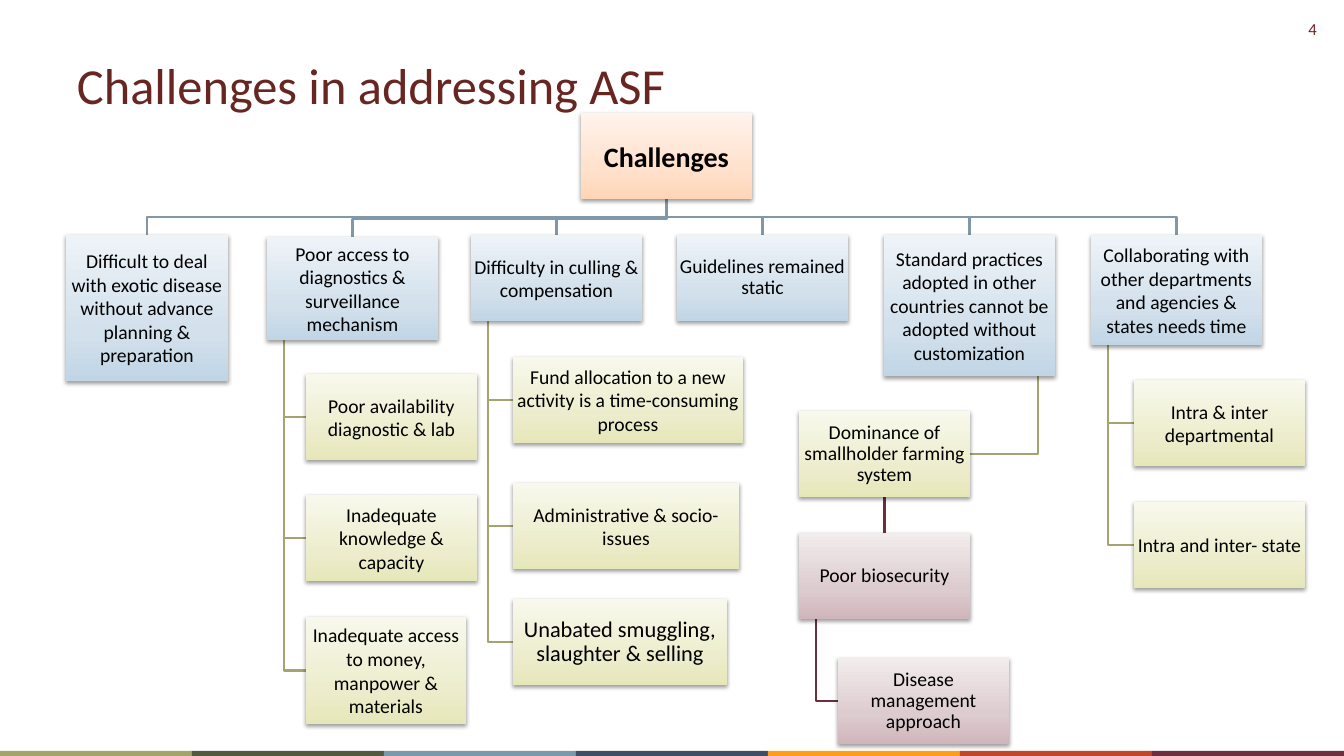
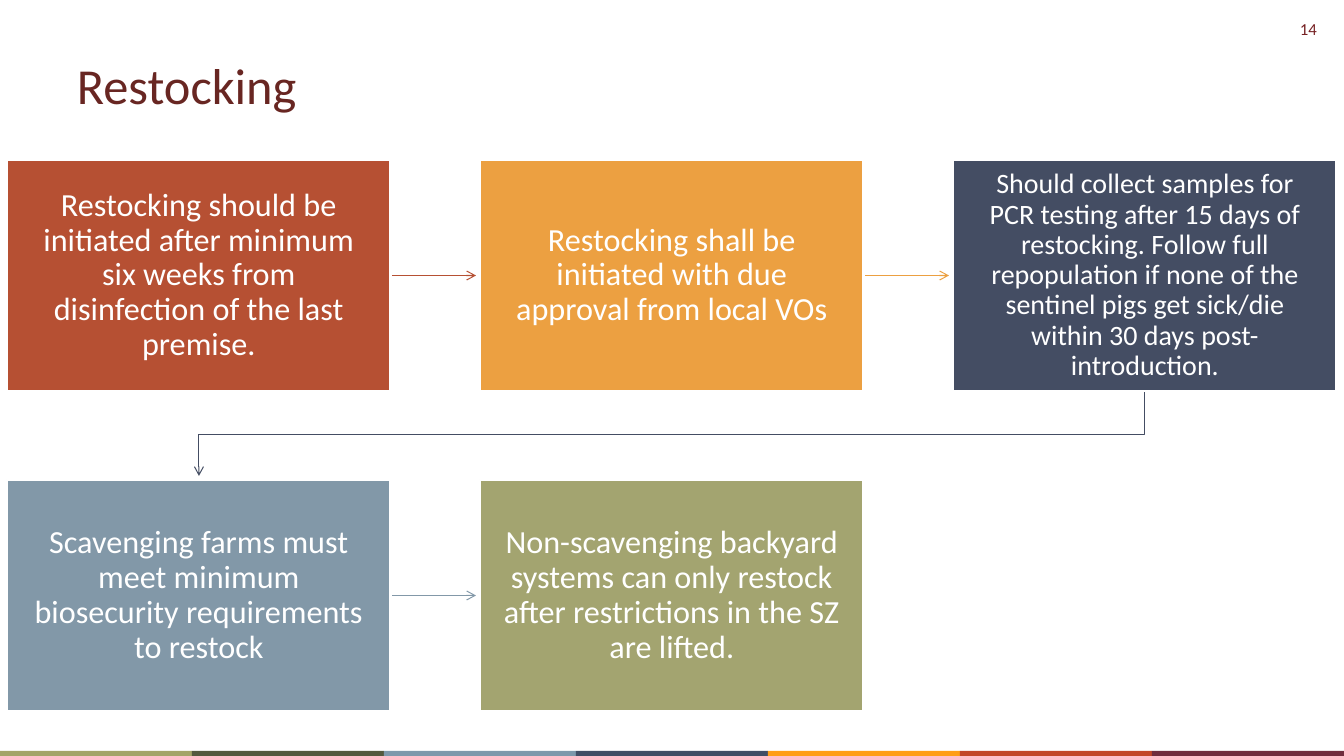
from itertools import pairwise
from lxml.etree import SubElement
from pptx import Presentation
from pptx.dml.color import RGBColor
from pptx.enum.shapes import MSO_CONNECTOR, MSO_SHAPE
from pptx.enum.text import MSO_ANCHOR, PP_ALIGN
from pptx.oxml import parse_xml
from pptx.oxml.ns import nsdecls, qn
from pptx.util import Pt

WIDE, HIGH = 1344, 756
SCALE = 12192000 / WIDE
FONT = "Calibri"
COLORS = {
    "title": "682622", "number": "762123", "black": "000000", "white": "FFFFFF",
    "rust": "B65033", "amber": "ECA041", "navy": "444D63",
    "steel": "8298A8", "olive": "A3A470", "wine": "69303D",
}
BANDS = ["A3A467", "53593E", "7C98AB", "404E65", "FF9E16", "C34628", "712C3D"]
FADES = {
    "peach": ["FFD5B7", "FFE1CC", "FFF3EC"],
    "steel": ["C1D5E5", "D3E1EC", "EEF3F8"],
    "olive": ["E6E7B9", "EDEDCE", "F8F9EC"],
    "wine": ["CFB6BA", "DDCCCF", "F2ECED"],
}
NODE_W, NODE_H = 171, 86
STEM = 17
STEP_W, STEP_H = 384, 231
STEP_X, STEP_Y = 473, 320
REACH = 85


def px(value):
    return round(value * SCALE)


def paint(color):
    return RGBColor.from_string(COLORS.get(color, color))


def write(shape, text, size, color, align=PP_ALIGN.CENTER, bold=False,
          tight=False, inset=(1, 1), anchor=MSO_ANCHOR.MIDDLE):
    frame = shape.text_frame
    frame.text = text
    frame.word_wrap = True
    frame.vertical_anchor = anchor
    frame.margin_left = frame.margin_right = px(inset[0])
    frame.margin_top = frame.margin_bottom = px(inset[1])
    line = frame.paragraphs[0]
    line.alignment = align
    if tight:
        line.line_spacing = 0.9
    font = line.runs[0].font
    font.name, font.size, font.bold = FONT, Pt(size), bold
    font.color.rgb = paint(color)


def add_label(slide, box, text, size, color, align, anchor):
    label = slide.shapes.add_textbox(*map(px, box))
    write(label, text, size, color, align, inset=(10, 5), anchor=anchor)


def add_rect(slide, box, color=None):
    rect = slide.shapes.add_shape(MSO_SHAPE.RECTANGLE, *map(px, box))
    rect.shadow.inherit = False
    rect.line.fill.background()
    if color:
        rect.fill.solid()
        rect.fill.fore_color.rgb = paint(color)
    return rect


def add_route(slide, points, color, width, arrow=False):
    spots = [(px(x), px(y)) for x, y in points]
    if len(spots) == 2:
        route = slide.shapes.add_connector(MSO_CONNECTOR.STRAIGHT, *spots[0], *spots[1])
    else:
        maker = slide.shapes.build_freeform(*spots[0])
        maker.add_line_segments(spots[1:], close=False)
        route = maker.convert_to_shape()
        route.fill.background()
    route.line.color.rgb = paint(color)
    route.line.width = Pt(width)
    if arrow:
        SubElement(route.line._get_or_add_ln(), qn("a:tailEnd"), type="arrow")
    if len(spots) == 2:
        SubElement(route._element.spPr, qn("a:effectLst"))
    else:
        route.shadow.inherit = False


def add_fade(rect, colors):
    stops = "".join(
        f'<a:gs pos="{place}"><a:srgbClr val="{color}"/></a:gs>'
        for place, color in zip((0, 35000, 100000), colors))
    fade = parse_xml(
        f'<a:gradFill {nsdecls("a")} rotWithShape="1"><a:gsLst>{stops}</a:gsLst>'
        '<a:lin ang="16200000" scaled="0"/></a:gradFill>')
    props = rect._element.spPr
    props.find(qn("a:prstGeom")).addnext(fade)
    shade = SubElement(props.find(qn("a:effectLst")), qn("a:outerShdw"),
                       blurRad=str(Pt(3.1)), dist=str(Pt(1.6)), dir="5400000", rotWithShape="0")
    tone = SubElement(shade, qn("a:srgbClr"), val=COLORS["black"])
    SubElement(tone, qn("a:alpha"), val="38000")


def add_node(slide, box, text, fade, size=14, tight=False, bold=False):
    rect = add_rect(slide, box)
    add_fade(rect, FADES[fade])
    write(rect, text, size, "black", tight=tight, bold=bold)


def add_slide(deck, title, number):
    slide = deck.slides.add_slide(deck.slide_layouts[6])
    add_label(slide, (1256, 14, 71, 30), number, 12, "number", PP_ALIGN.RIGHT, MSO_ANCHOR.TOP)
    pitch = WIDE // len(BANDS)
    for index, color in enumerate(BANDS):
        add_rect(slide, (index * pitch, HIGH - 5, pitch, 5), color)
    add_label(slide, (67, 47, 1210, 75), title, 36, "title", PP_ALIGN.LEFT, MSO_ANCHOR.MIDDLE)
    return slide


def hang(parent, child):
    x, y, w, h = parent
    left, top, wide, high = child
    foot, mid = y + h, top + high / 2
    if left == x:
        return [(x + w / 2, foot), (x + w / 2, top)]
    if left > x:
        return [(x + STEM, foot), (x + STEM, mid), (left, mid)]
    return [(x + w - STEM, foot), (x + w - STEM, mid), (left + wide, mid)]


def add_tree(slide):
    root = (581, 113, NODE_W, NODE_H)
    heads = {
        "exotic": (66, 235, 162, 146, "Difficult to deal with exotic disease without advance planning & preparation"),
        "access": (267, 237, NODE_W, 103, "Poor access to diagnostics & surveillance mechanism"),
        "cull": (471, 235, NODE_W, NODE_H, "Difficulty in culling & compensation"),
        "static": (677, 235, NODE_W, NODE_H, "Guidelines remained static"),
        "custom": (884, 235, NODE_W, 141, "Standard practices adopted in other countries cannot be adopted without customization"),
        "states": (1091, 235, NODE_W, 110, "Collaborating with other departments and agencies & states needs time"),
    }
    leaves = {
        "lab": ("access", 306, 374, NODE_W, NODE_H, "Poor availability diagnostic & lab", "olive"),
        "skill": ("access", 306, 495, NODE_W, NODE_H, "Inadequate knowledge & capacity", "olive"),
        "money": ("access", 306, 617, 160, 107, "Inadequate access to money, manpower & materials", "olive"),
        "fund": ("cull", 513, 357, 230, NODE_H, "Fund allocation to a new activity is a time-consuming process", "olive"),
        "social": ("cull", 513, 483, 226, NODE_H, "Administrative & socio- issues", "olive"),
        "trade": ("cull", 513, 599, 214, NODE_H, "Unabated smuggling, slaughter & selling", "olive"),
        "small": ("custom", 799, 411, NODE_W, NODE_H, "Dominance of smallholder farming system", "olive"),
        "safe": ("small", 799, 533, NODE_W, NODE_H, "Poor biosecurity", "wine"),
        "manage": ("safe", 838, 658, NODE_W, NODE_H, "Disease management approach", "wine"),
        "inner": ("states", 1134, 380, NODE_W, NODE_H, "Intra & inter departmental", "olive"),
        "outer": ("states", 1134, 502, NODE_W, NODE_H, "Intra and inter- state", "olive"),
    }
    tight = {"static", "trade", "small", "safe", "manage"}
    boxes = {name: head[:4] for name, head in heads.items()}
    boxes |= {name: leaf[1:5] for name, leaf in leaves.items()}
    trunk, foot = root[0] + root[2] / 2, root[1] + root[3]
    for x, y, w, h, text in heads.values():
        mid, bus = x + w / 2, y - 18
        add_route(slide, [(trunk, foot), (trunk, bus), (mid, bus), (mid, y)], "steel", 2)
    for name, leaf in leaves.items():
        add_route(slide, hang(boxes[leaf[0]], boxes[name]), leaf[-1], 2)
    add_node(slide, root, "Challenges", "peach", 20, bold=True)
    for name, head in heads.items():
        add_node(slide, boxes[name], head[-1], "steel", tight=name in tight)
    for name, leaf in leaves.items():
        size = 16 if name == "trade" else 14
        add_node(slide, boxes[name], leaf[-2], leaf[-1], size, name in tight)


def add_flow(slide):
    steps = [
        ("rust", 23, "Restocking should be initiated after minimum six weeks from disinfection of the last premise."),
        ("amber", 23, "Restocking shall be initiated with due approval from local VOs"),
        ("navy", 20, "Should collect samples for PCR testing after 15 days of restocking. Follow full repopulation if none of the sentinel pigs get sick/die within 30 days post-introduction."),
        ("steel", 23, "Scavenging farms must meet minimum biosecurity requirements to restock"),
        ("olive", 23, "Non-scavenging backyard systems can only restock after restrictions in the SZ are lifted."),
    ]
    spots = [(7 + i % 3 * STEP_X, 160 + i // 3 * STEP_Y) for i in range(len(steps))]
    for ((x, y), (left, top)), (color, *rest) in zip(pairwise(spots), steps):
        if top == y:
            mid = y + STEP_H / 2
            points = [(x + STEP_W, mid), (x + STEP_W + REACH, mid)]
        else:
            start, end, foot = x + STEP_W / 2, left + STEP_W / 2, y + STEP_H
            turn = foot + 44
            points = [(start, foot), (start, turn), (end, turn), (end, foot + REACH)]
        add_route(slide, points, color, 0.75, arrow=True)
    for (x, y), (color, size, text) in zip(spots, steps):
        rect = add_rect(slide, (x, y, STEP_W, STEP_H), color)
        rect.line.color.rgb = paint("white")
        rect.line.width = Pt(2)
        write(rect, text, size, "white", tight=True, inset=(19, 20))


def main():
    deck = Presentation()
    deck.slide_width, deck.slide_height = px(WIDE), px(HIGH)
    add_tree(add_slide(deck, "Challenges in addressing ASF", "4"))
    add_flow(add_slide(deck, "Restocking", "14"))
    deck.save("out.pptx")


if __name__ == "__main__":
    main()
